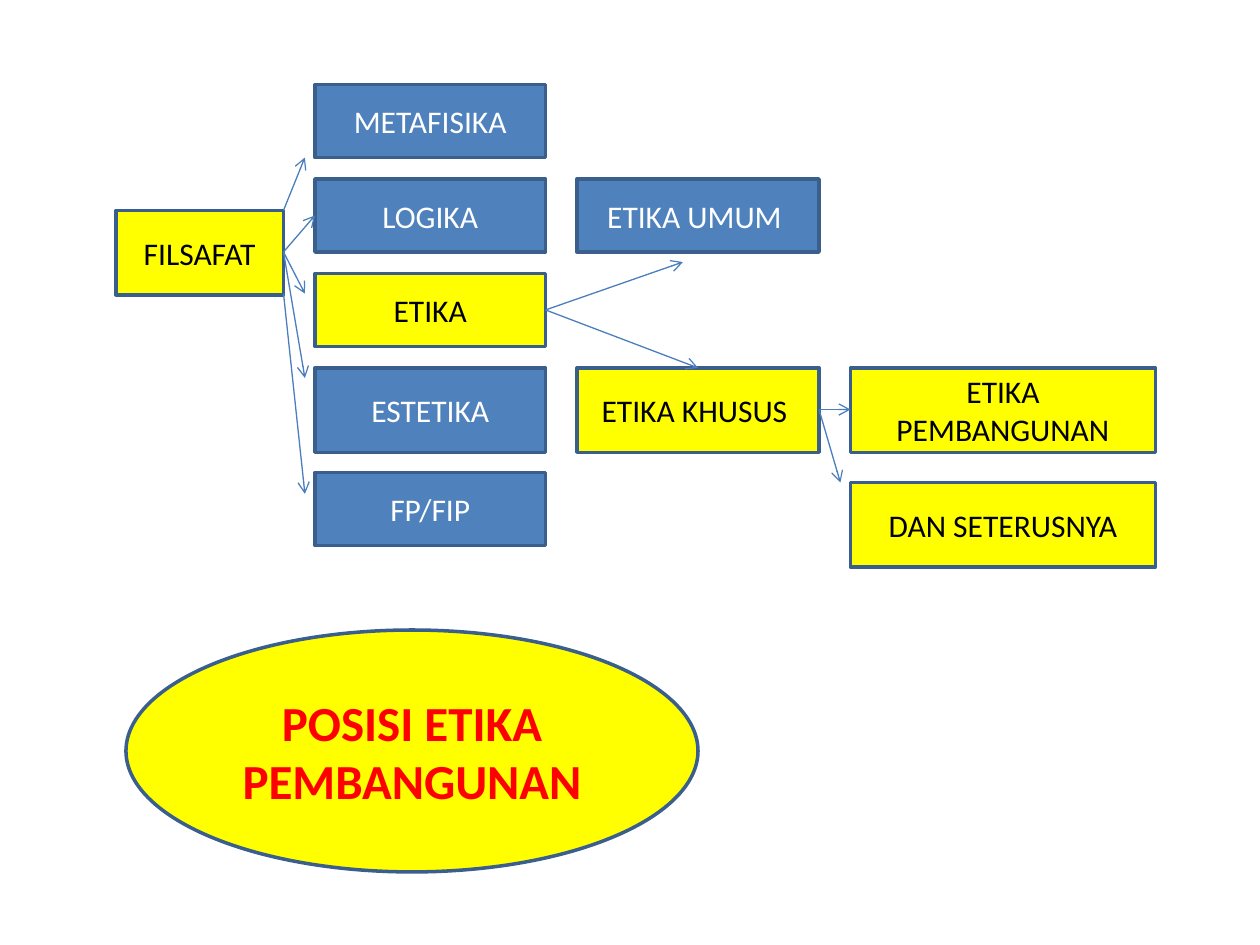
import pptx
import pptx.util
import pptx.dml.color
import pptx.enum.shapes
import pptx.enum.text
import pptx.oxml.ns
import lxml.etree

Inches, Pt = pptx.util.Inches, pptx.util.Pt
KIND = pptx.enum.shapes.MSO_SHAPE
COLORS = {"blue": "4F81BD", "yellow": "FFFF00", "edge": "3A5F8C", "arrow": "4B7EBC",
          "white": "FFFFFF", "black": "000000", "red": "FF0000"}
INK = {"blue": "white", "yellow": "black"}

# Columns of boxes: left, width, then (text, fill, top, height)
COLUMNS = [
    (0.92, 1.33, [("FILSAFAT", "yellow", 1.67, 0.67)]),
    (2.5, 1.83, [("METAFISIKA", "blue", 0.67, 0.58),
                 ("LOGIKA", "blue", 1.42, 0.58),
                 ("ETIKA", "yellow", 2.17, 0.58),
                 ("ESTETIKA", "blue", 2.92, 0.67),
                 ("FP/FIP", "blue", 3.75, 0.58)]),
    (4.58, 1.92, [("ETIKA UMUM ", "blue", 1.42, 0.58),
                  ("ETIKA KHUSUS ", "yellow", 2.92, 0.67)]),
    (6.75, 2.42, [("ETIKA PEMBANGUNAN", "yellow", 2.92, 0.67),
                  ("DAN SETERUSNYA", "yellow", 3.83, 0.67)]),
]
TITLE = ("POSISI ETIKA PEMBANGUNAN", (1, 5, 4.54, 1.92))

# Arrows: start point, then the points it leads to
ARROWS = [
    ((2.25, 1.67), [(2.42, 1.25)]),
    ((2.25, 2), [(2.5, 1.71), (2.42, 2.33), (2.42, 3)]),
    ((2.25, 2.33), [(2.42, 3.92)]),
    ((4.33, 2.46), [(5.42, 2.08), (5.54, 2.92)]),
    ((6.5, 3.25), [(6.75, 3.25), (6.67, 3.83)]),
]


def color(name):
    return pptx.dml.color.RGBColor.from_string(COLORS[name])


def add_box(slide, kind, place, text, fill, ink, size=18, bold=False):
    box = slide.shapes.add_shape(kind, *map(Inches, place))
    box.shadow.inherit = False
    box.fill.solid()
    box.fill.fore_color.rgb = color(fill)
    box.line.color.rgb = color("edge")
    box.line.width = Pt(2)
    frame = box.text_frame
    frame.word_wrap = True
    frame.vertical_anchor = pptx.enum.text.MSO_ANCHOR.MIDDLE
    para = frame.paragraphs[0]
    para.text = text
    para.alignment = pptx.enum.text.PP_ALIGN.CENTER
    font = para.font
    font.name, font.size, font.bold = "Calibri", Pt(size), bold
    font.color.rgb = color(ink)


def add_arrow(slide, start, end):
    straight = pptx.enum.shapes.MSO_CONNECTOR.STRAIGHT
    arrow = slide.shapes.add_connector(straight, *map(Inches, start + end))
    arrow.line.color.rgb = color("arrow")
    arrow.line.width = Pt(0.75)
    qn = pptx.oxml.ns.qn
    props = arrow._element.spPr
    tip = lxml.etree.SubElement(props.find(qn("a:ln")), qn("a:tailEnd"))
    tip.set("type", "arrow")
    lxml.etree.SubElement(props, qn("a:effectLst"))


def main():
    deck = pptx.Presentation()
    deck.slide_width, deck.slide_height = Inches(10), Inches(7.5)
    slide = deck.slides.add_slide(deck.slide_layouts[6])

    # Tree of branches
    for left, width, boxes in COLUMNS:
        for text, fill, top, height in boxes:
            add_box(slide, KIND.RECTANGLE, (left, top, width, height), text, fill, INK[fill])
    for start, ends in ARROWS:
        for end in ends:
            add_arrow(slide, start, end)

    # Topic
    text, place = TITLE
    add_box(slide, KIND.OVAL, place, text, "yellow", "red", 28, True)

    deck.save("out.pptx")


if __name__ == "__main__":
    main()
